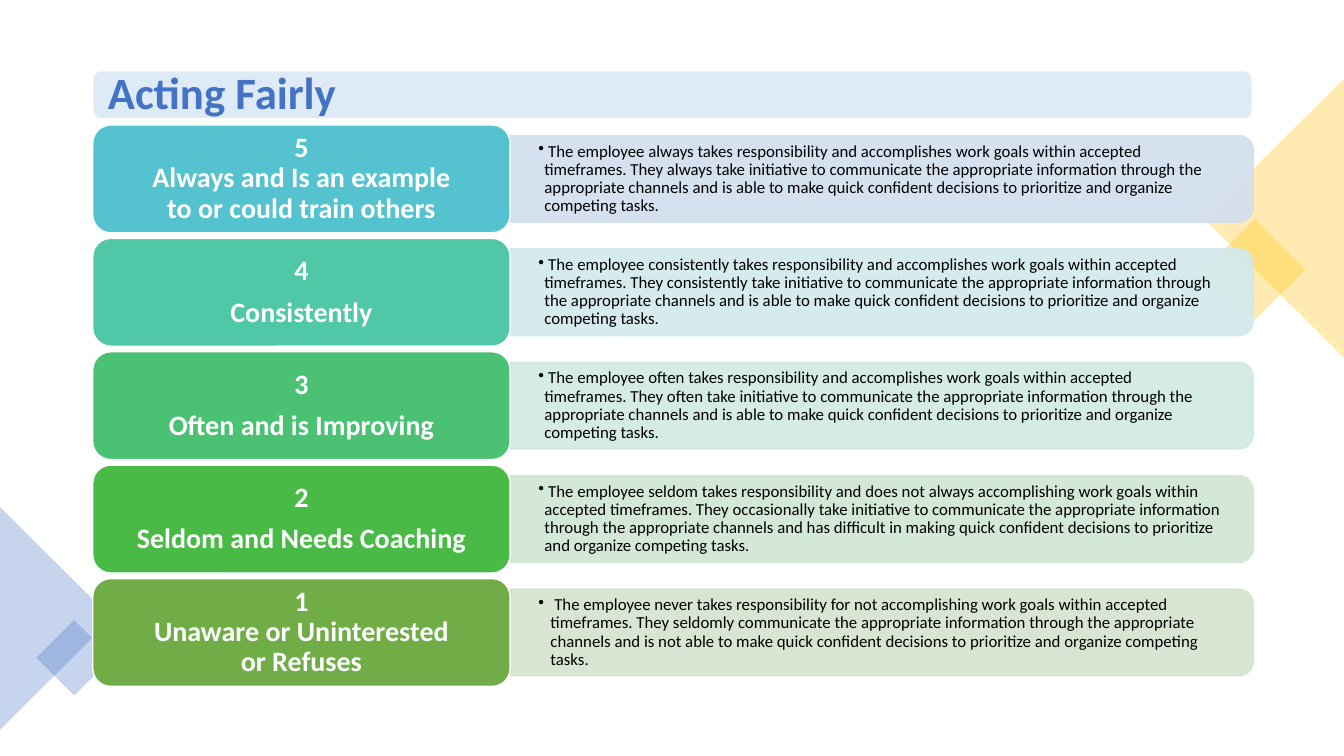
from lxml import etree
from pptx import Presentation
from pptx.dml.color import RGBColor
from pptx.enum.shapes import MSO_SHAPE
from pptx.enum.text import MSO_ANCHOR, MSO_AUTO_SIZE, PP_ALIGN
from pptx.oxml.ns import qn
from pptx.util import Inches, Pt

RECT, TRIANGLE = MSO_SHAPE.RECTANGLE, MSO_SHAPE.ISOSCELES_TRIANGLE
ROUNDED, ROUND_TOP = MSO_SHAPE.ROUNDED_RECTANGLE, MSO_SHAPE.ROUND_2_SAME_RECTANGLE
MIDDLE, NO_FIT = MSO_ANCHOR.MIDDLE, MSO_AUTO_SIZE.NONE
LEFT, CENTER = PP_ALIGN.LEFT, PP_ALIGN.CENTER
NBSP = chr(160)
FONT = "Calibri"
COLORS = {"gold": "FFC000", "blue": "4472C4", "bar": "DEEBF7", "white": "FFFFFF", "black": "000000"}
DECORATIONS = [
    (RECT, (12.09, 2.32, 0.71, 0.71), 45, "gold"),
    (TRIANGLE, (11.25, 1.47, 2.77, 1.39), 270, "gold"),
    (TRIANGLE, (-0.55, 5.58, 2.21, 1.11), 90, "blue"),
    (RECT, (0.47, 6.26, 0.53, 0.53), 45, "blue"),
]
ENDING = "and is able to make quick confident decisions to prioritize and organize competing tasks."
CHANNELS = "the appropriate information through the appropriate channels"
RATINGS = [
    (["5", "Always and Is an example", "to or could train others"], "55C3CF", "D2DEEF", 0.06,
     "The employee always takes responsibility and accomplishes work goals within accepted timeframes. "
     f"They always take initiative to communicate {CHANNELS} {ENDING}"),
    (["4", "Consistently"], "50C8A7", "D1E9ED", 0.06,
     "The employee consistently takes responsibility and accomplishes work goals within accepted timeframes. "
     f"They consistently take initiative to communicate {CHANNELS} {ENDING}"),
    (["3", "Often and is Improving"], "4BC174", "D0EAE1", 0.06,
     "The employee often takes responsibility and accomplishes work goals within accepted timeframes. "
     f"They often take initiative to communicate {CHANNELS} {ENDING}"),
    (["2", "Seldom and Needs Coaching"], "4ABA46", "D0E6D4", 0.06,
     "The employee seldom takes responsibility and does not always accomplishing work goals within accepted "
     f"timeframes. They occasionally take initiative to communicate {CHANNELS} and has difficult in making "
     "quick confident decisions to prioritize and organize competing tasks."),
    (["1", "Unaware or Uninterested", "or Refuses"], "70AD47", "D5E3CF", 0.12,
     "The employee never takes responsibility for not accomplishing work goals within accepted timeframes. "
     f"They seldomly communicate {CHANNELS} and is not able to make quick confident decisions to prioritize "
     "and organize competing tasks."),
]


def add_block(page, kind, box, fill, line=None, rotation=0, opacity=100):
    """Add a flat preset shape with optional outline, rotation and opacity."""
    block = page.shapes.add_shape(kind, *map(Inches, box))
    block.shadow.inherit = False
    block.rotation = rotation
    block.fill.solid()
    block.fill.fore_color.rgb = RGBColor.from_string(fill)
    if line:
        block.line.color.rgb = RGBColor.from_string(line)
        block.line.width = Pt(1)
    else:
        block.line.fill.background()
    if opacity < 100:
        for color in block.element.spPr.iter(qn("a:srgbClr")):
            etree.SubElement(color, qn("a:alpha"), val=str(opacity * 1000))
    return block


def write_text(shape, lines, size, color, bold=False, align=LEFT, gap=0, insets=(0.13, 0.07), hanging=0):
    """Write one paragraph per line, bulleted when a hanging indent is given."""
    frame = shape.text_frame
    frame.word_wrap = True
    frame.auto_size = NO_FIT
    frame.vertical_anchor = MIDDLE
    frame.margin_left = frame.margin_right = Inches(insets[0])
    frame.margin_top = frame.margin_bottom = Inches(insets[1])
    for index, line in enumerate(lines):
        para = frame.add_paragraph() if index else frame.paragraphs[0]
        para.alignment = align
        para.line_spacing = 0.9
        para.space_before = Pt(0)
        para.space_after = Pt(gap)
        span = para.add_run()
        span.text = line
        span.font.name = FONT
        span.font.size = Pt(size)
        span.font.bold = bold
        span.font.color.rgb = RGBColor.from_string(color)
        if hanging:
            settings = para._p.get_or_add_pPr()
            settings.set("marL", str(Inches(hanging)))
            settings.set("indent", str(-Inches(hanging)))
            etree.SubElement(settings, qn("a:buChar"), char="•")


def add_decorations(page):
    """Place the translucent shapes at the slide edges."""
    for kind, box, rotation, color in DECORATIONS:
        add_block(page, kind, box, COLORS[color], rotation=rotation, opacity=30)


def add_title(page, box):
    """Set the title on a pale rounded bar."""
    left, top, width, height = box
    bar = add_block(page, ROUNDED, box, COLORS["bar"], line=COLORS["white"])
    title = page.shapes.title
    title.left, title.top = Inches(left + 0.02), Inches(top + 0.02)
    title.width, title.height = Inches(width - 0.04), Inches(height - 0.04)
    write_text(title, ["Acting Fairly"], 32, COLORS["blue"], bold=True)
    bar.element.addnext(title.element)


def add_rating(page, box, label, label_fill, detail_fill, hanging, detail):
    """Draw one rating: a label block and its description panel."""
    left, top, width, height = box
    label_width, panel_height = 4.14, 0.86
    panel_left, panel_width = left + label_width, width - label_width
    center_x, center_y = panel_left + panel_width / 2, top + height / 2
    upright = (center_x - panel_height / 2, center_y - panel_width / 2, panel_height, panel_width)
    add_block(page, ROUND_TOP, upright, detail_fill, line=detail_fill, rotation=90, opacity=90)
    text_box = page.shapes.add_textbox(
        Inches(panel_left + 0.01), Inches(center_y - 0.385), Inches(panel_width - 0.04), Inches(0.77))
    text = NBSP + detail.replace("timeframes. They", f"timeframes.{NBSP}They")
    write_text(text_box, [text], 12, COLORS["black"], insets=(0.27, 0.14), hanging=hanging)
    block = add_block(page, ROUNDED, (left, top, label_width, height), label_fill, line=COLORS["white"])
    write_text(block, label, 20, COLORS["white"], bold=True, align=CENTER,
               gap=8 if len(label) == 2 else 0, insets=(0.13, 0.09))


def main():
    """Build the rating scale slide and save it."""
    deck = Presentation()
    deck.slide_width, deck.slide_height = Inches(13.33), Inches(7.5)
    page = deck.slides.add_slide(deck.slide_layouts[5])
    add_decorations(page)
    add_title(page, (0.92, 0.7, 11.5, 0.48))
    for index, rating in enumerate(RATINGS):
        add_rating(page, (0.92, 1.24 + index * 1.125, 11.51, 1.07), *rating)
    deck.save("out.pptx")


if __name__ == "__main__":
    main()
